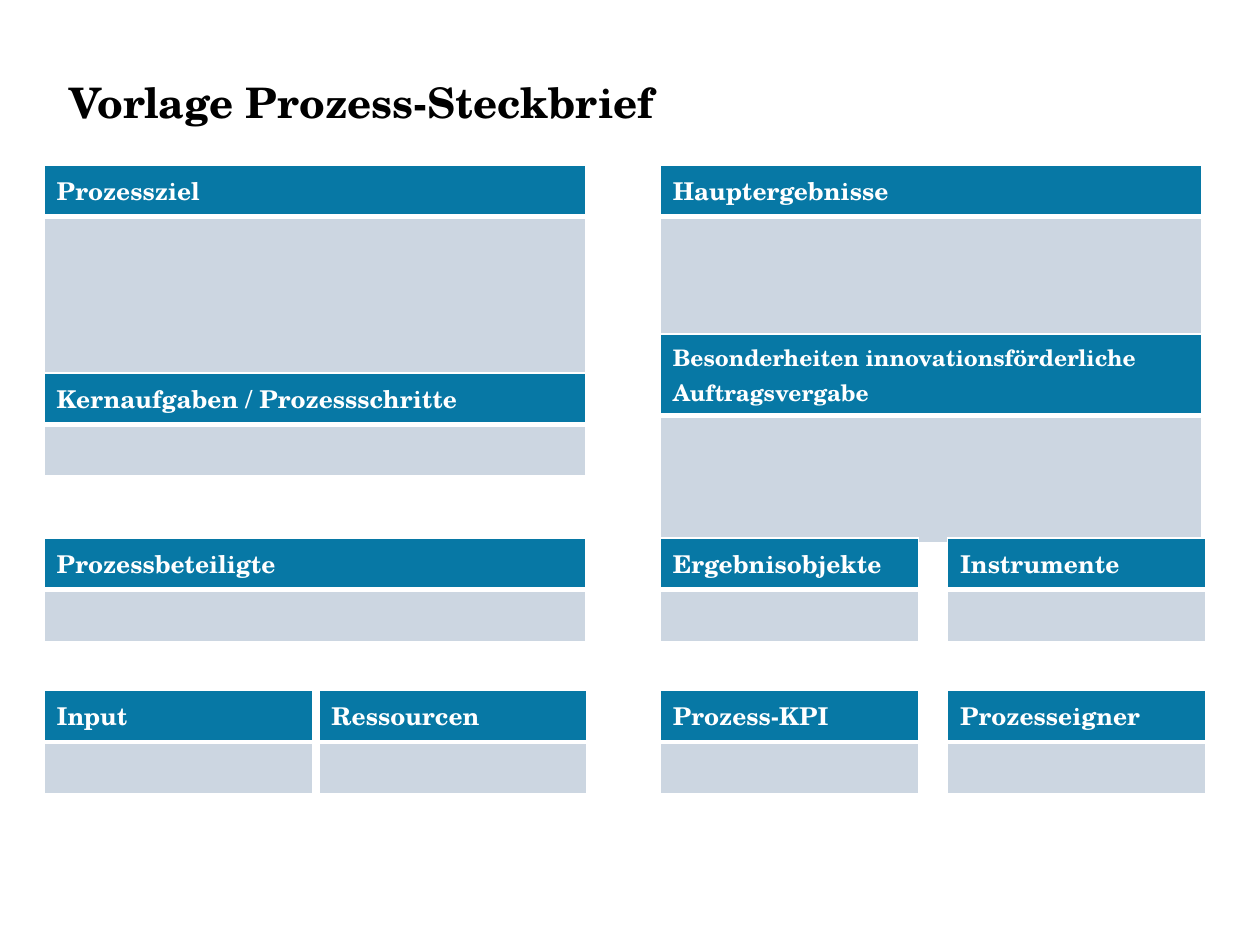
from lxml import etree
from pptx import Presentation
from pptx import util as u
from pptx.dml.color import RGBColor
from pptx.enum import text
from pptx.oxml import ns

FONT = "TeX Gyre Schola"
BLUE, GREY, WHITE, BLACK = "0778A5", "CCD6E1", "FFFFFF", "000000"


def write(frame, words, size, color, line_spacing=None):
    paragraph = frame.paragraphs[0]
    paragraph.line_spacing = line_spacing
    run = paragraph.add_run()
    run.text = words
    run.font.name, run.font.size, run.font.bold = FONT, u.Pt(size), True
    run.font.color.rgb = RGBColor.from_string(color)


def style_cell(cell, fill, **widths):
    """Fill a cell and give its sides L, R, T, B white borders of 1 pt unless widths says otherwise."""
    properties = cell._tc.get_or_add_tcPr()
    for side in "LRTB":
        line = etree.SubElement(properties, ns.qn(f"a:ln{side}"), w=str(u.Pt(widths.get(side, 1))))
        solid = etree.SubElement(line, ns.qn("a:solidFill"))
        etree.SubElement(solid, ns.qn("a:srgbClr"), val=WHITE)
    cell.fill.solid()
    cell.fill.fore_color.rgb = RGBColor.from_string(fill)


deck = Presentation()
deck.slide_width, deck.slide_height = u.Inches(10), u.Inches(7.5)
slide = deck.slides.add_slide(deck.slide_layouts[6])

title = slide.shapes.add_textbox(u.Inches(0.55), u.Inches(0.52), u.Inches(7.36), u.Inches(1.04)).text_frame
title.word_wrap = True
title.vertical_anchor = text.MSO_ANCHOR.TOP
title.margin_left = title.margin_right = title.margin_top = title.margin_bottom = 0
write(title, "Vorlage Prozess-Steckbrief", 24, BLACK, line_spacing=u.Pt(35))

# Grid in inches: four column starts, five row starts
columns = [0.35, 2.53, 5.24, 7.52]
rows = [1.31, 2.65, 2.96, 4.27, 5.48]
WIDE, LEFT_HALF, RIGHT_HALF = 4.3, 2.13, 2.05
LINE = 0.41

# heading, column, row, width, heading height, field height, text size
fields = [
    ("Prozessziel", 0, 0, WIDE, LINE, rows[2] - rows[0] - LINE, 14),
    ("Kernaufgaben / Prozessschritte", 0, 2, WIDE, LINE, LINE, 14),
    ("Prozessbeteiligte", 0, 3, WIDE, LINE, LINE, 14),
    ("Input", 0, 4, LEFT_HALF, LINE, LINE, 14),
    ("Hauptergebnisse", 2, 0, WIDE, LINE, rows[1] - rows[0] - LINE, 14),
    ("Besonderheiten innovationsförderliche Auftragsvergabe", 2, 1, WIDE, 0.65, 1.01, 13),
    ("Prozess-KPI", 2, 4, RIGHT_HALF, LINE, LINE, 14),
    ("Prozesseigner", 3, 4, RIGHT_HALF, LINE, LINE, 14),
    ("Ressourcen", 1, 4, LEFT_HALF, LINE, LINE, 14),
    ("Ergebnisobjekte", 2, 3, RIGHT_HALF, LINE, LINE, 14),
    ("Instrumente", 3, 3, RIGHT_HALF, LINE, LINE, 14),
]
for heading, column, row, width, heading_height, field_height, size in fields:
    field = slide.shapes.add_table(
        2, 1, u.Inches(columns[column]), u.Inches(rows[row]),
        u.Inches(width), u.Inches(heading_height + field_height)).table
    field.rows[0].height = u.Inches(heading_height)
    field.rows[1].height = u.Inches(field_height)
    style_cell(field.cell(0, 0), BLUE, B=3)
    style_cell(field.cell(1, 0), GREY, T=3)
    write(field.cell(0, 0).text_frame, heading, size, WHITE)

deck.save("out.pptx")
